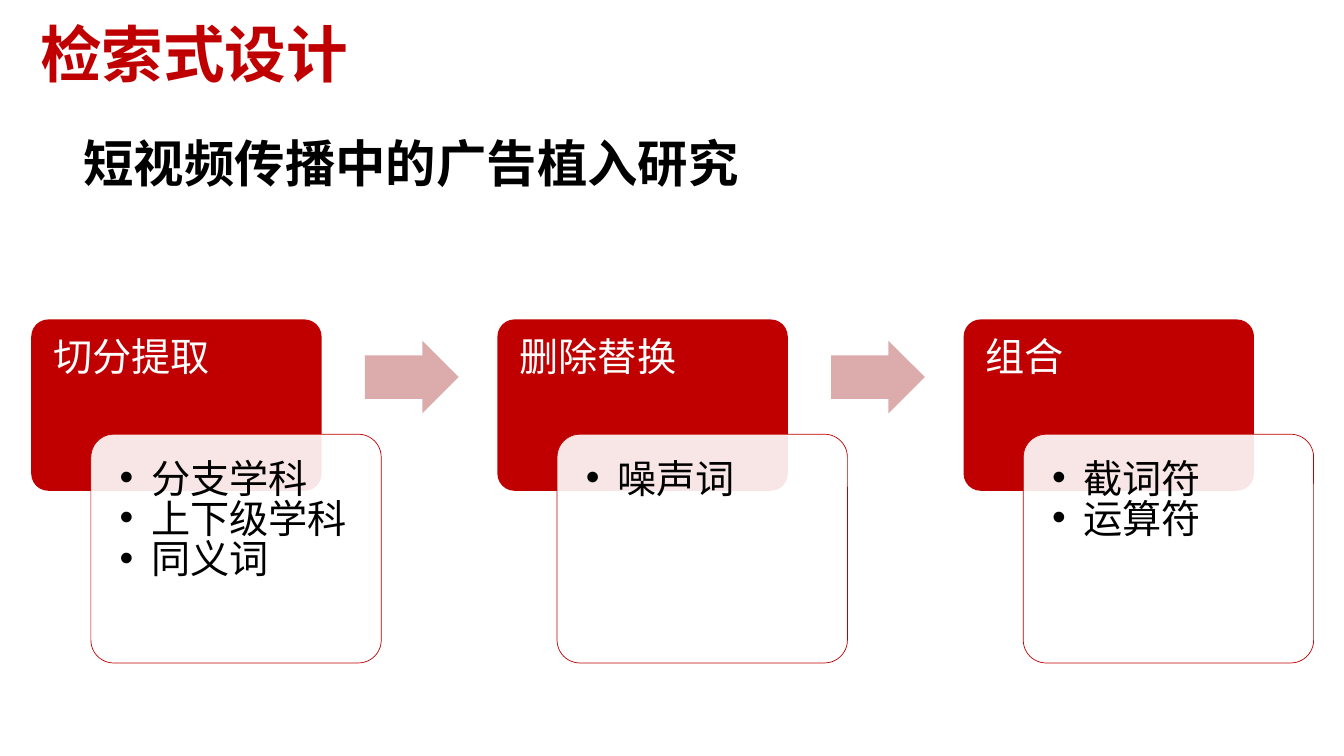
"""Builds a slide showing the three steps of designing a search query."""
import pptx
import pptx.util
import pptx.dml.color
import pptx.enum.shapes
import pptx.enum.text
import pptx.oxml
import pptx.oxml.ns

Pt = pptx.util.Pt
SHAPES = pptx.enum.shapes.MSO_SHAPE
ANCHORS = pptx.enum.text.MSO_ANCHOR

TITLE = "检索式设计"
TOPIC = "短视频传播中的广告植入研究"
STEPS = [
    ("切分提取", ["分支学科", "上下级学科", "同义词"]),
    ("删除替换", ["噪声词"]),
    ("组合", ["截词符", "运算符"]),
]
COLOURS = {"red": "C00000", "pink": "DCABAB", "white": "FFFFFF", "black": "000000"}
CJK_FONT = "Noto Sans CJK SC"
TITLE_FORMAT = {"name": "Calibri", "size": Pt(44), "bold": True}
TOPIC_FORMAT = {"name": CJK_FONT, "size": Pt(36), "bold": True}
STEP_FORMAT = {"name": CJK_FONT, "size": Pt(28), "bold": False}

STEP_LEFT, STEP_TOP, STEP_PITCH = 22.3, 228.2, 333
CARD_WIDTH, HEAD_HEIGHT, BODY_HEIGHT = 207.4, 122.4, 163.4
BODY_SHIFT = (42.6, 82)
ARROW_SHIFT = (238.4, 15.2)
ARROW_SIZE = (66.9, 51.8)
BULLET_INDENT = 22.5


def colour(name):
    return pptx.dml.color.RGBColor.from_string(COLOURS[name])


def add_bullet(para):
    properties = para._p.get_or_add_pPr()
    properties.set("marL", str(Pt(BULLET_INDENT)))
    properties.set("indent", str(-Pt(BULLET_INDENT)))
    namespace = pptx.oxml.ns.nsdecls("a")
    properties.append(pptx.oxml.parse_xml(f'<a:buFont {namespace} typeface="Arial"/>'))
    properties.append(pptx.oxml.parse_xml(f'<a:buChar {namespace} char="•"/>'))


def write(box, lines, text_format, ink, inset, anchor, spacing, bulleted=False):
    frame = box.text_frame
    frame.word_wrap = True
    frame.vertical_anchor = anchor
    for side, margin in zip(("left", "top", "right", "bottom"), inset):
        setattr(frame, f"margin_{side}", Pt(margin))
    for number, line in enumerate(lines):
        para = frame.add_paragraph() if number else frame.paragraphs[0]
        para.alignment = pptx.enum.text.PP_ALIGN.LEFT
        para.line_spacing = spacing
        para.space_after = Pt(1.8 if bulleted else 0)
        if bulleted:
            add_bullet(para)
        span = para.add_run()
        span.text = line
        for key, value in text_format.items():
            setattr(span.font, key, value)
        span.font.color.rgb = colour(ink)
        east_asian = pptx.oxml.parse_xml(
            f'<a:ea {pptx.oxml.ns.nsdecls("a")} typeface="{CJK_FONT}"/>')
        span.font._element.find(pptx.oxml.ns.qn("a:latin")).addnext(east_asian)


def add_block(page, kind, place, fill, adjustments, outline=None):
    block = page.shapes.add_shape(kind, *map(Pt, place))
    block.shadow.inherit = False
    block.fill.solid()
    block.fill.fore_color.rgb = colour(fill)
    for number, value in enumerate(adjustments):
        block.adjustments[number] = value
    if outline:
        block.line.color.rgb = colour(outline)
        block.line.width = Pt(0.5)
    else:
        block.line.fill.background()
    return block


def set_opacity(block, percent):
    tint = block.fill._xPr.find(".//" + pptx.oxml.ns.qn("a:srgbClr"))
    tint.append(pptx.oxml.parse_xml(
        f'<a:alpha {pptx.oxml.ns.nsdecls("a")} val="{percent * 1000}"/>'))


def add_step(page, number, heading, items):
    left = STEP_LEFT + number * STEP_PITCH
    head = add_block(page, SHAPES.ROUNDED_RECTANGLE,
                     (left, STEP_TOP, CARD_WIDTH, HEAD_HEIGHT), "red", [0.1])
    write(head, [heading], STEP_FORMAT, "white", (12.3, 12.3, 12.3, 8.6), ANCHORS.TOP, 0.8)
    body = add_block(page, SHAPES.ROUNDED_RECTANGLE,
                     (left + BODY_SHIFT[0], STEP_TOP + BODY_SHIFT[1], CARD_WIDTH, BODY_HEIGHT),
                     "white", [0.1], "red")
    set_opacity(body, 90)
    write(body, items, STEP_FORMAT, "black", (15.8,) * 4, ANCHORS.TOP, 0.8, bulleted=True)
    if number < len(STEPS) - 1:
        add_block(page, SHAPES.RIGHT_ARROW,
                  (left + ARROW_SHIFT[0], STEP_TOP + ARROW_SHIFT[1], *ARROW_SIZE),
                  "pink", [0.6, 0.5])


def main():
    deck = pptx.Presentation()
    deck.slide_width, deck.slide_height = Pt(960), Pt(540)
    page = deck.slides.add_slide(deck.slide_layouts[6])
    inset = (7.2, 3.6, 7.2, 3.6)
    title = page.shapes.add_textbox(Pt(21.6), Pt(14.4), Pt(864), Pt(53.3))
    write(title, [TITLE], TITLE_FORMAT, "red", inset, ANCHORS.MIDDLE, 0.9)
    for number, (heading, items) in enumerate(STEPS):
        add_step(page, number, heading, items)
    topic = page.shapes.add_textbox(Pt(52.6), Pt(90.7), Pt(852.5), Pt(51.1))
    write(topic, [TOPIC], TOPIC_FORMAT, "black", inset, ANCHORS.TOP, 1.0)
    deck.save("out.pptx")


if __name__ == "__main__":
    main()
